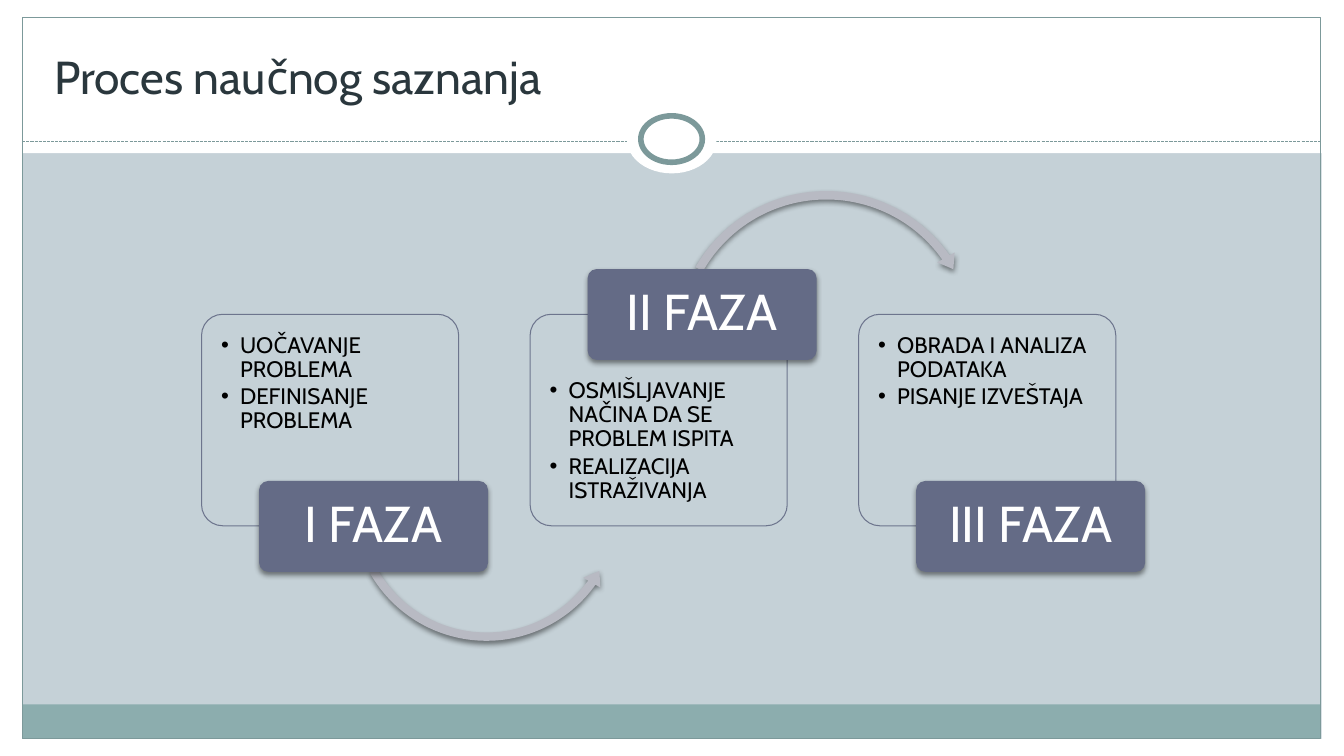
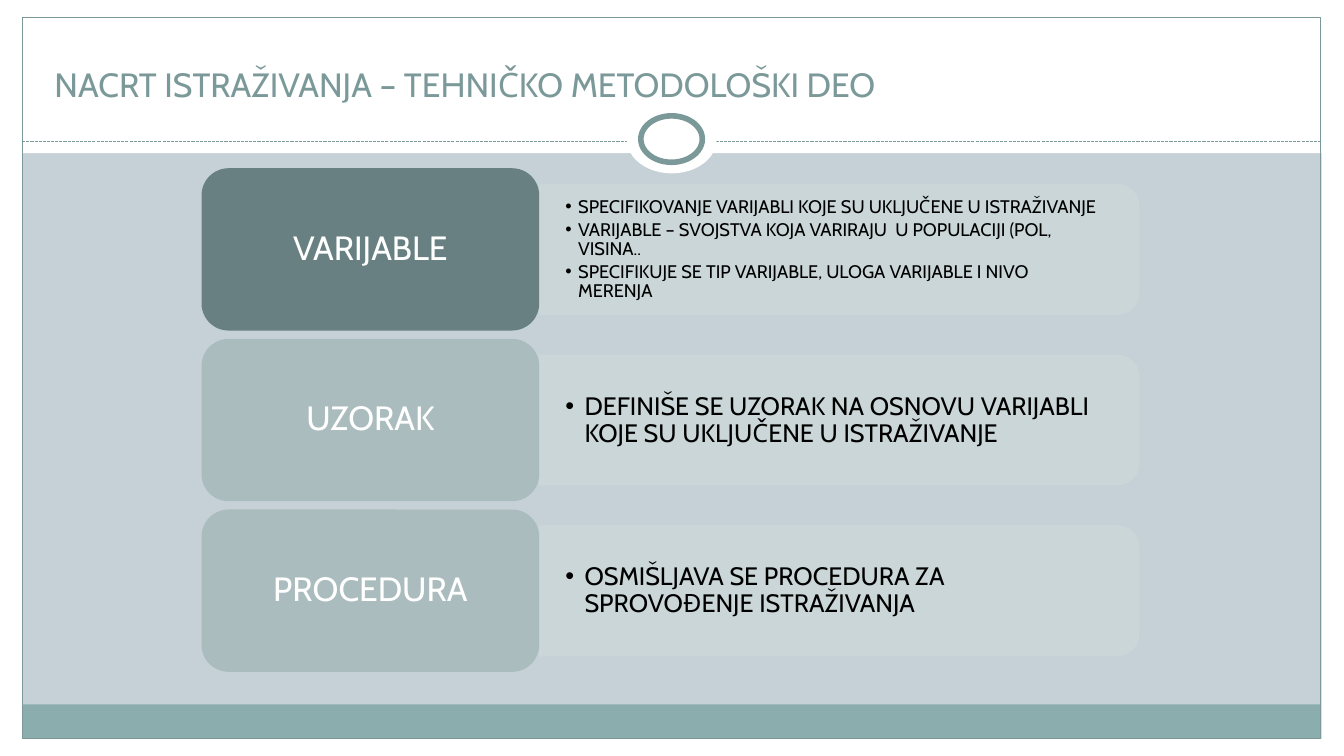
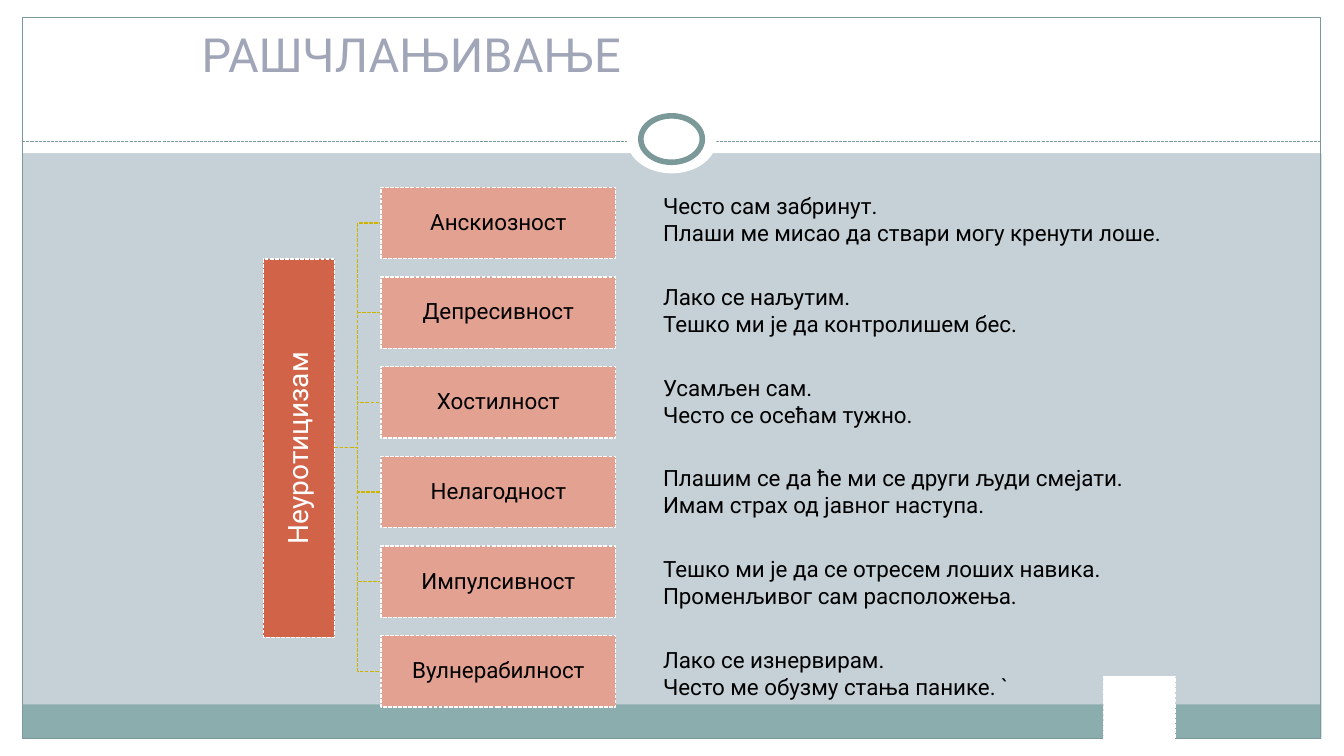
from dataclasses import dataclass
from typing import NamedTuple

from lxml.etree import SubElement
from pptx import Presentation
from pptx.dml.color import RGBColor
from pptx.enum.dml import MSO_LINE
from pptx.enum.shapes import MSO_CONNECTOR, MSO_SHAPE
from pptx.enum.text import MSO_ANCHOR, MSO_AUTO_SIZE, PP_ALIGN
from pptx.oxml.ns import qn
from pptx.util import Cm, Pt


@dataclass(frozen=True)
class Theme:
    back: str = "C5D1D7"
    white: str = "FFFFFF"
    black: str = "000000"
    ink: str = "2A373D"
    teal: str = "7C999A"
    band: str = "8CADAE"
    slate: str = "646B86"
    arrow: str = "B8BAC3"
    deep: str = "688081"
    sage: str = "AABCBD"
    mist: str = "CBD7D7"
    lilac: str = "A0A5B8"
    brick: str = "D16349"
    salmon: str = "E3A192"
    gold: str = "CCB400"
    latin: str = "Cabin"
    cyril: str = "Roboto"
    small: float = 13
    base: float = 16
    mid: float = 18
    trunk: float = 20
    large: float = 24
    head: float = 33
    phase: float = 36
    caps: float = 42
    thin: float = 0.75
    dash: float = 0.9
    ring: float = 4


T = Theme()


class Box(NamedTuple):
    x: float
    y: float
    w: float
    h: float


class Phase(NamedTuple):
    name: str
    items: list[str]
    high: bool = False


class Row(NamedTuple):
    name: str
    items: list[str]
    fill: str
    size: float
    hang: float


class Trait(NamedTuple):
    name: str
    lines: list[str]


class Bend(NamedTuple):
    kind: MSO_SHAPE
    box: Box
    turn: list[float]


PHASES = [
    Phase("I FAZA", ["UOČAVANJE PROBLEMA", "DEFINISANJE PROBLEMA"]),
    Phase("II FAZA", ["OSMIŠLJAVANJE NAČINA DA SE PROBLEM ISPITA",
                      "REALIZACIJA ISTRAŽIVANJA"], True),
    Phase("III FAZA", ["OBRADA I ANALIZA PODATAKA", "PISANJE IZVEŠTAJA"]),
]
BENDS = [
    Bend(MSO_SHAPE.LEFT_CIRCULAR_ARROW, Box(8.74, 9.25, 7.04, 7.04),
         [0.03, 3.706, 21.461, 90.245, 0.035]),
    Bend(MSO_SHAPE.CIRCULAR_ARROW, Box(16.89, 4.67, 7.87, 7.87),
         [0.027, 3.292, 194.953, 125.755, 0.032]),
]
ROWS = [
    Row("VARIJABLE", [
        "SPECIFIKOVANJE VARIJABLI KOJE SU UKLJUČENE U ISTRAŽIVANJE",
        "VARIJABLE – SVOJSTVA KOJA VARIRAJU  U POPULACIJI (POL, VISINA..",
        "SPECIFIKUJE SE TIP VARIJABLE, ULOGA VARIJABLE I NIVO MERENJA",
    ], T.deep, T.small, 0.32),
    Row("UZORAK", [
        "DEFINIŠE SE UZORAK NA OSNOVU VARIJABLI KOJE SU UKLJUČENE U ISTRAŽIVANJE",
    ], T.sage, T.mid, 0.48),
    Row("PROCEDURA", ["OSMIŠLJAVA SE PROCEDURA ZA SPROVOĐENJE ISTRAŽIVANJA"],
        T.sage, T.mid, 0.48),
]
TRAITS = [
    Trait("Анскиозност", ["Често сам забринут.",
                          "Плаши ме мисао да ствари могу кренути лоше."]),
    Trait("Депресивност", ["Лако се наљутим.", "Тешко ми је да контролишем бес."]),
    Trait("Хостилност", ["Усамљен сам.", "Често се осећам тужно."]),
    Trait("Нелагодност", ["Плашим се да ће ми се други људи смејати.",
                          "Имам страх од јавног наступа."]),
    Trait("Импулсивност", ["Тешко ми је да се отресем лоших навика.",
                           "Променљивог сам расположења."]),
    Trait("Вулнерабилност", ["Лако се изнервирам.",
                             "Често ме обузму стања панике. `"]),
]


def place(shape, box: Box) -> None:
    shape.left, shape.top, shape.width, shape.height = map(Cm, box)


def stroke(line, color: str, width: float, dash: bool = False) -> None:
    line.color.rgb = RGBColor.from_string(color)
    line.width = Pt(width)
    if dash:
        line.dash_style = MSO_LINE.SQUARE_DOT


def fade(node, share: int) -> None:
    for color in list(node.iter(qn("a:srgbClr"))):
        SubElement(color, qn("a:alpha"), val=str(share * 1000))


def draw(slide, box: Box, fill: str = "", line: str = "", width: float = T.thin,
         kind=MSO_SHAPE.RECTANGLE, dash: bool = False, turn: float = 0,
         bends=(), alpha: int = 100, drop: bool = False):
    shape = slide.shapes.add_shape(kind, *map(Cm, box))
    shape.shadow.inherit = False
    shape.rotation = turn
    for i, value in enumerate(bends):
        shape.adjustments[i] = value
    if fill:
        shape.fill.solid()
        shape.fill.fore_color.rgb = RGBColor.from_string(fill)
    else:
        shape.fill.background()
    if line:
        stroke(shape.line, line, width, dash)
    else:
        shape.line.fill.background()
    props = shape._element.spPr
    if alpha < 100:
        fade(props, alpha)
    if drop:
        glow = SubElement(props.find(qn("a:effectLst")), qn("a:outerShdw"),
                          blurRad=str(Pt(4)), dist=str(Pt(2)), dir="5400000",
                          algn="ctr", rotWithShape="0")
        fade_to = SubElement(glow, qn("a:srgbClr"), val=T.black)
        SubElement(fade_to, qn("a:alpha"), val="45000")
    return shape


def join(slide, start: tuple, end: tuple, color: str, width: float,
         kind=MSO_CONNECTOR.STRAIGHT) -> None:
    link = slide.shapes.add_connector(kind, *map(Cm, start + end))
    stroke(link.line, color, width, True)
    SubElement(link._element.spPr, qn("a:effectLst"))


def write(shape, lines: list[str], *, size: float, color: str = T.black,
          font: str = T.latin, align=PP_ALIGN.LEFT, anchor=MSO_ANCHOR.MIDDLE,
          pad: tuple = (0.25, 0.13), space: float = 1, after: float = 0,
          gap: float = 0, group: int = 1, hang: float = 0,
          caps: bool = False) -> None:
    frame = shape.text_frame
    frame.word_wrap = True
    frame.auto_size = MSO_AUTO_SIZE.NONE
    frame.vertical_anchor = anchor
    frame.margin_left = frame.margin_right = Cm(pad[0])
    frame.margin_top = frame.margin_bottom = Cm(pad[1])
    for i, line in enumerate(lines):
        para = frame.add_paragraph() if i else frame.paragraphs[0]
        para.alignment = align
        para.line_spacing = space
        para.space_before = Pt(gap if i and i % group == 0 else 0)
        para.space_after = Pt(after)
        props = para._p.get_or_add_pPr()
        props.set("marL", str(Cm(hang)))
        props.set("indent", str(-Cm(hang)))
        if hang:
            SubElement(props, qn("a:buChar"), char="•")
        else:
            SubElement(props, qn("a:buNone"))
        run = para.add_run()
        run.text = line
        run.font.name, run.font.size, run.font.bold = font, Pt(size), False
        run.font.color.rgb = RGBColor.from_string(color)
        if caps:
            run._r.get_or_add_rPr().set("cap", "small")


def label(shape, name: str, size: float, **style) -> None:
    write(shape, [name], size=size, align=PP_ALIGN.CENTER, space=0.9, **style)


def points(slide, holder, box: Box, items: list[str], size: float,
           hang: float, **style) -> None:
    slide.shapes._spTree.append(holder._element)
    place(holder, box)
    write(holder, items, size=size, hang=hang, space=0.9,
          after=round(size * 0.15, 2), **style)


def title(slide, name: str, box: Box = Box(1.12, 0.64, 31.6, 2.11), **style) -> None:
    place(slide.shapes.title, box)
    write(slide.shapes.title, [name], **style)


def start(deck, layout: int, count: int):
    slide = deck.slides.add_slide(deck.slide_layouts[layout])
    lists = list(slide.placeholders)[1:]
    for spare in lists[count:]:
        spare._element.getparent().remove(spare._element)
    return slide, lists[:count]


def frame(deck) -> None:
    master = deck.slide_master
    master.background.fill.solid()
    master.background.fill.fore_color.rgb = RGBColor.from_string(T.back)
    slide = deck.slides[0]
    tree = slide.shapes._spTree
    first = len(tree)
    for box in (Box(0, 18.62, 33.87, 0.43), Box(0, 0, 33.87, 3.86),
                Box(0, 0, 0.56, 19.05), Box(33.31, 0, 0.56, 19.05)):
        draw(slide, box, T.white)
    draw(slide, Box(0.56, 17.75, 32.72, 0.86), T.band)
    draw(slide, Box(0.56, 0.43, 32.72, 18.19), line=T.teal)
    join(slide, (0.56, 3.56), (33.27, 3.56), T.teal, T.thin)
    draw(slide, Box(15.8, 2.67, 2.26, 1.7), T.white, kind=MSO_SHAPE.OVAL)
    draw(slide, Box(16.15, 2.92, 1.55, 1.17), T.white, T.teal, T.ring,
         kind=MSO_SHAPE.OVAL)
    for i, part in enumerate(list(tree)[first:]):
        master.shapes._spTree.insert(2 + i, part)


def process(slide, lists) -> None:
    title(slide, "Proces naučnog saznanja", size=T.head, color=T.ink,
          anchor=MSO_ANCHOR.BOTTOM)
    for i, phase in enumerate(PHASES):
        x = 5.08 + 8.28 * i
        draw(slide, Box(x, 7.92, 6.48, 5.33), T.back, T.slate,
             kind=MSO_SHAPE.ROUNDED_RECTANGLE, bends=[0.1], alpha=90)
        points(slide, lists[i], Box(x + 0.13, 9.19 if phase.high else 8.05, 6.22, 3.96),
               phase.items, T.base, 0.48, anchor=MSO_ANCHOR.TOP, pad=(0.36, 0.36))
        for bend in BENDS[i:i + 1]:
            draw(slide, bend.box, T.arrow, kind=bend.kind, bends=bend.turn, drop=True)
        tag = draw(slide, Box(x + 1.45, 6.78 if phase.high else 12.12, 5.77, 2.29),
                   T.slate, kind=MSO_SHAPE.ROUNDED_RECTANGLE, bends=[0.1], drop=True)
        label(tag, phase.name, T.phase, color=T.white)


def design(slide, lists) -> None:
    title(slide, "NACRT ISTRAŽIVANJA – TEHNIČKO METODOLOŠKI DEO", size=T.large,
          color=T.teal, anchor=MSO_ANCHOR.BOTTOM)
    for i, row in enumerate(ROWS):
        y = 4.24 + 4.3 * i
        draw(slide, Box(19.51, y - 5.51, 3.28, 15.11), T.mist, T.mist, turn=90,
             kind=MSO_SHAPE.ROUND_2_SAME_RECTANGLE, alpha=90)
        points(slide, lists[i], Box(13.56, y + 0.58, 14.96, 2.95), row.items,
               row.size, row.hang, pad=(0.69, 0.36))
        tag = draw(slide, Box(5.08, y, 8.51, 4.09), row.fill,
                   kind=MSO_SHAPE.ROUNDED_RECTANGLE)
        label(tag, row.name, T.large, color=T.white)


def traits(slide, lists) -> None:
    title(slide, "рашчлањивање", Box(4.83, 0.33, 21.79, 1.83), size=T.caps,
          color=T.lilac, font=T.cyril, caps=True)
    edge = dict(line=T.white, width=T.dash, dash=True)
    slots = [Box(9.6, 4.72 + 2.26 * i, 5.92, 1.8) for i in range(len(TRAITS))]
    for slot in reversed(slots):
        join(slide, (8.43, 11.28), (slot.x, slot.y + slot.h / 2), T.gold, T.dash,
             MSO_CONNECTOR.ELBOW)
    trunk = draw(slide, Box(2.77, 10.39, 9.53, 1.8), T.brick, turn=270, **edge)
    label(trunk, "Неуротицизам", T.trunk, color=T.white, font=T.cyril)
    for slot, trait in zip(slots, TRAITS):
        label(draw(slide, slot, T.salmon, **edge), trait.name, T.base,
              font=T.cyril, pad=(0.03, 0.03))
    draw(slide, Box(27.81, 17.04, 1.8, 1.6), T.white, **edge)
    slide.shapes._spTree.append(lists[0]._element)
    place(lists[0], Box(16.46, 4.72, 14.73, 13.16))
    write(lists[0], [line for trait in TRAITS for line in trait.lines],
          size=T.base, font=T.cyril, anchor=MSO_ANCHOR.TOP, gap=26.4, group=2)


def main() -> None:
    deck = Presentation()
    deck.slide_width, deck.slide_height = Cm(33.87), Cm(19.05)
    for build, layout, count in ((process, 4, 3), (design, 4, 3), (traits, 1, 1)):
        build(*start(deck, layout, count))
    frame(deck)
    deck.save("out.pptx")


if __name__ == "__main__":
    main()
